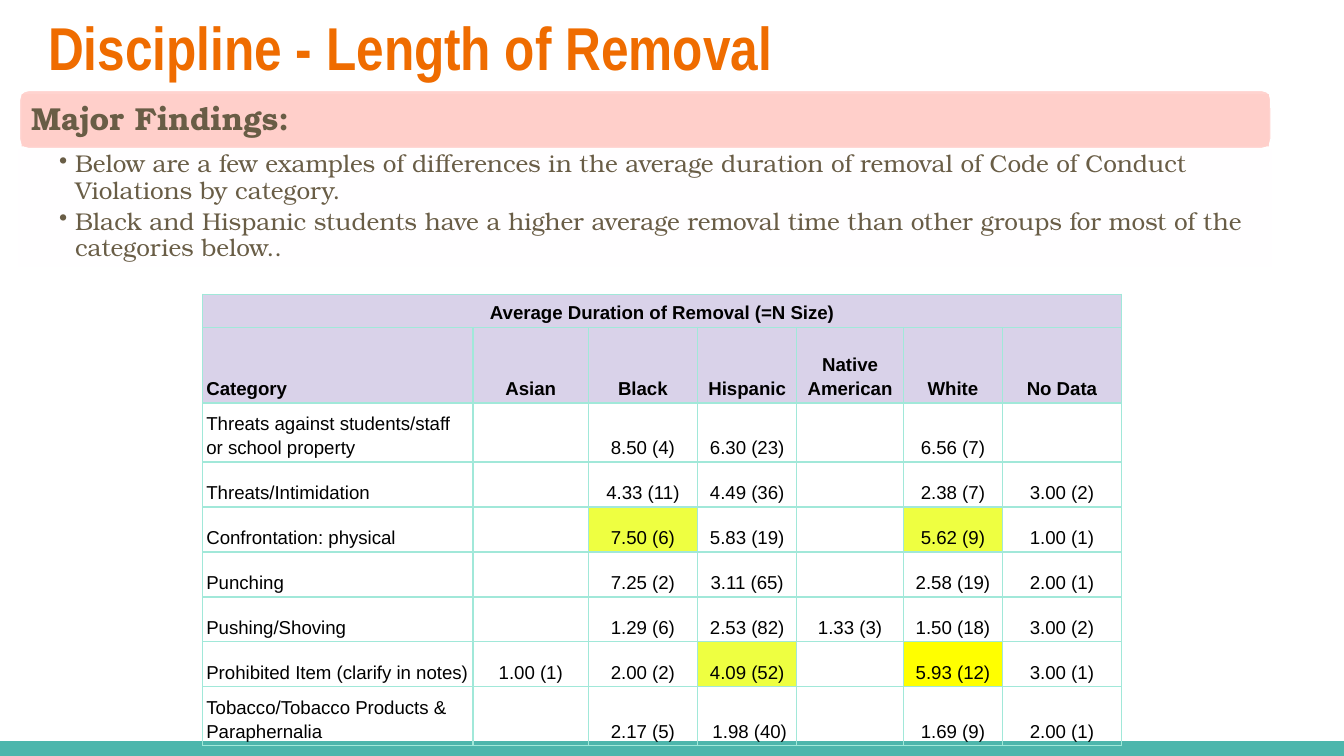
from pptx import Presentation
from pptx.dml.color import RGBColor
from pptx.enum.shapes import MSO_SHAPE as Kind
from pptx.enum.text import MSO_ANCHOR as Anchor, PP_ALIGN as Align
from pptx.oxml import parse_xml
from pptx.oxml.ns import nsdecls
from pptx.util import Cm, Pt
from lxml import etree

ORANGE = RGBColor(0xEF, 0x6C, 0x00)
TEAL = RGBColor(0x4D, 0xB6, 0xAC)
PINK = RGBColor(0xFF, 0xCF, 0xCA)
BROWN = RGBColor(0x69, 0x5D, 0x46)
LILAC = RGBColor(0xD9, 0xD2, 0xE9)
LIME = RGBColor(0xEE, 0xFF, 0x41)
YELLOW = RGBColor(0xFF, 0xFF, 0x00)
MINT = RGBColor(0xA1, 0xE8, 0xD9)
PALE = RGBColor(0xFF, 0xFE, 0xFF)
WHITE = RGBColor(0xFF, 0xFF, 0xFF)
BLACK = RGBColor(0, 0, 0)

SERIF = "TeX Gyre Bonum"
SIDES = ("left", "top", "right", "bottom")

FACTS = (
    "Below are a few examples of differences in the average duration of "
    "removal of Code of Conduct Violations by category.",
    "Black and Hispanic students have a higher average removal time than "
    "other groups for most of the categories below..",
)
COLS = (5.11, 2.18, 2.06, 1.88, 2.01, 1.88, 2.24)
HIGHS = (0.6, 1.43, 1.06) + (0.85,) * 5 + (1.06,)
ROWS = (
    ("Average Duration of Removal (=N Size)", "", "", "", "", "", ""),
    ("Category", "Asian", "Black", "Hispanic", "Native American", "White", "No Data"),
    ("Threats against students/staff or school property",
     "", "8.50 (4)", "6.30 (23)", "", "6.56 (7)", ""),
    ("Threats/Intimidation", "", "4.33 (11)", "4.49 (36)", "", "2.38 (7)", "3.00 (2)"),
    ("Confrontation: physical", "", "7.50 (6)", "5.83 (19)", "", "5.62 (9)", "1.00 (1)"),
    ("Punching", "", "7.25 (2)", "3.11 (65)", "", "2.58 (19)", "2.00 (1)"),
    ("Pushing/Shoving", "", "1.29 (6)", "2.53 (82)", "1.33 (3)", "1.50 (18)", "3.00 (2)"),
    ("Prohibited Item (clarify in notes)",
     "1.00 (1)", "2.00 (2)", "4.09 (52)", "", "5.93 (12)", "3.00 (1)"),
    ("Tobacco/Tobacco Products & Paraphernalia",
     "", "2.17 (5)", " 1.98 (40)", "", "1.69 (9)", "2.00 (1)"),
)
MARKS = {(4, 2): LIME, (4, 5): LIME, (7, 3): LIME, (7, 5): YELLOW}


def style(para, text, color, space, **form):
    """Write one run and give it the format values."""
    para.line_spacing = space
    run = para.add_run()
    run.text = text
    run.font.color.rgb = color
    for key, value in form.items():
        setattr(run.font, key, value)


def inset(item, pads):
    for side, pad in zip(SIDES, pads):
        setattr(item, "margin_" + side, Cm(pad))


def block(slide, kind, area, fill, line=None, alpha=None):
    shape = slide.shapes.add_shape(kind, *map(Cm, area))
    shape.shadow.inherit = False
    shape.fill.solid()
    shape.fill.fore_color.rgb = fill
    if alpha:
        tint = shape.fill._xPr.find(".//{*}srgbClr")
        tint.append(parse_xml(f'<a:alpha {nsdecls("a")} val="{alpha * 1000}"/>'))
    if line:
        shape.line.color.rgb = line
        shape.line.width = Pt(1.25)
    else:
        shape.line.fill.background()
    return shape


def frame(shape, pads, anchor):
    box = shape.text_frame
    box.word_wrap = True
    box.vertical_anchor = anchor
    inset(box, pads)
    return box


def bullet(para):
    props = para._p.get_or_add_pPr()
    for key, value in {"lvl": "1", "marL": Cm(0.3), "indent": Cm(-0.3)}.items():
        props.set(key, str(int(value)))
    props.append(parse_xml(
        f'<a:buClr {nsdecls("a")}><a:srgbClr val="{BROWN}"/></a:buClr>'))
    props.append(parse_xml(f'<a:buChar {nsdecls("a")} char="•"/>'))


def border(cell):
    props = cell._tc.get_or_add_tcPr()
    for spot, side in enumerate("LRTB"):
        props.insert(spot, parse_xml(
            f'<a:ln{side} {nsdecls("a")} w="{Pt(0.75)}"><a:solidFill>'
            f'<a:srgbClr val="{MINT}"/></a:solidFill></a:ln{side}>'))


def fill_cell(cell, text, row, col):
    cell.vertical_anchor = Anchor.BOTTOM
    inset(cell, (0.07,) * 4)
    tone = LILAC if row < 2 else MARKS.get((row, col))
    if tone:
        cell.fill.solid()
        cell.fill.fore_color.rgb = tone
    else:
        cell.fill.background()
    border(cell)
    para = cell.text_frame.paragraphs[0]
    para.alignment = Align.CENTER if col or row == 0 else Align.LEFT
    if text:
        style(para, text, BLACK, 1.15, size=Pt(10), name="Arial", bold=row < 2)
    else:
        # Small type keeps empty cells from stretching the row
        end = etree.SubElement(para._p, "{%s}endParaRPr" % para._p.nsmap["a"])
        end.set("sz", "1000")


def table(slide):
    grid = slide.shapes.add_table(
        len(ROWS), len(COLS), Cm(3.83), Cm(5.56),
        Cm(sum(COLS)), Cm(sum(HIGHS))).table
    grid.first_row = grid.horz_banding = False
    for part, wide in zip(grid.columns, COLS):
        part.width = Cm(wide)
    for part, high in zip(grid.rows, HIGHS):
        part.height = Cm(high)
    for row, texts in enumerate(ROWS):
        for col, text in enumerate(texts):
            fill_cell(grid.cell(row, col), text, row, col)
    grid.cell(0, 0).merge(grid.cell(0, len(COLS) - 1))


def title(slide):
    shape = slide.shapes.add_textbox(Cm(0.66), Cm(0.15), Cm(23.67), Cm(1.6))
    box = frame(shape, (0.25,) * 4, Anchor.TOP)
    style(box.paragraphs[0], "Discipline - Length of Removal", ORANGE, 0.85,
          size=Pt(32.4), name="Arial Narrow", bold=True)


def findings(slide):
    # Heading band
    band = block(slide, Kind.ROUNDED_RECTANGLE, (0.36, 1.7, 23.67, 1.12), PINK, WHITE, 90)
    band.adjustments[0] = 0.167
    head = block(slide, Kind.RECTANGLE, (0.41, 1.78, 23.57, 0.99), PINK, alpha=90)
    para = frame(head, (0.18,) * 4, Anchor.MIDDLE).paragraphs[0]
    para.alignment = Align.LEFT
    style(para, "Major Findings:", BROWN, 0.9, size=Pt(17), name=SERIF, bold=True)

    # Bulleted facts
    body = block(slide, Kind.RECTANGLE, (0.36, 2.82, 23.67, 2.21), PALE)
    box = frame(body, (0.76, 0.05, 0.33, 0.05), Anchor.TOP)
    for spot, fact in enumerate(FACTS):
        para = box.add_paragraph() if spot else box.paragraphs[0]
        para.alignment = Align.LEFT
        para.space_before = Pt(2.6 * spot)
        style(para, fact, BROWN, 0.9, size=Pt(13), name=SERIF)
        bullet(para)


def main():
    deck = Presentation()
    deck.slide_width, deck.slide_height = Cm(25.4), Cm(14.29)
    slide = deck.slides.add_slide(deck.slide_layouts[6])
    block(slide, Kind.RECTANGLE, (0, 14.01, 25.4, 0.28), TEAL)
    title(slide)
    table(slide)
    findings(slide)
    deck.save("out.pptx")


if __name__ == "__main__":
    main()
